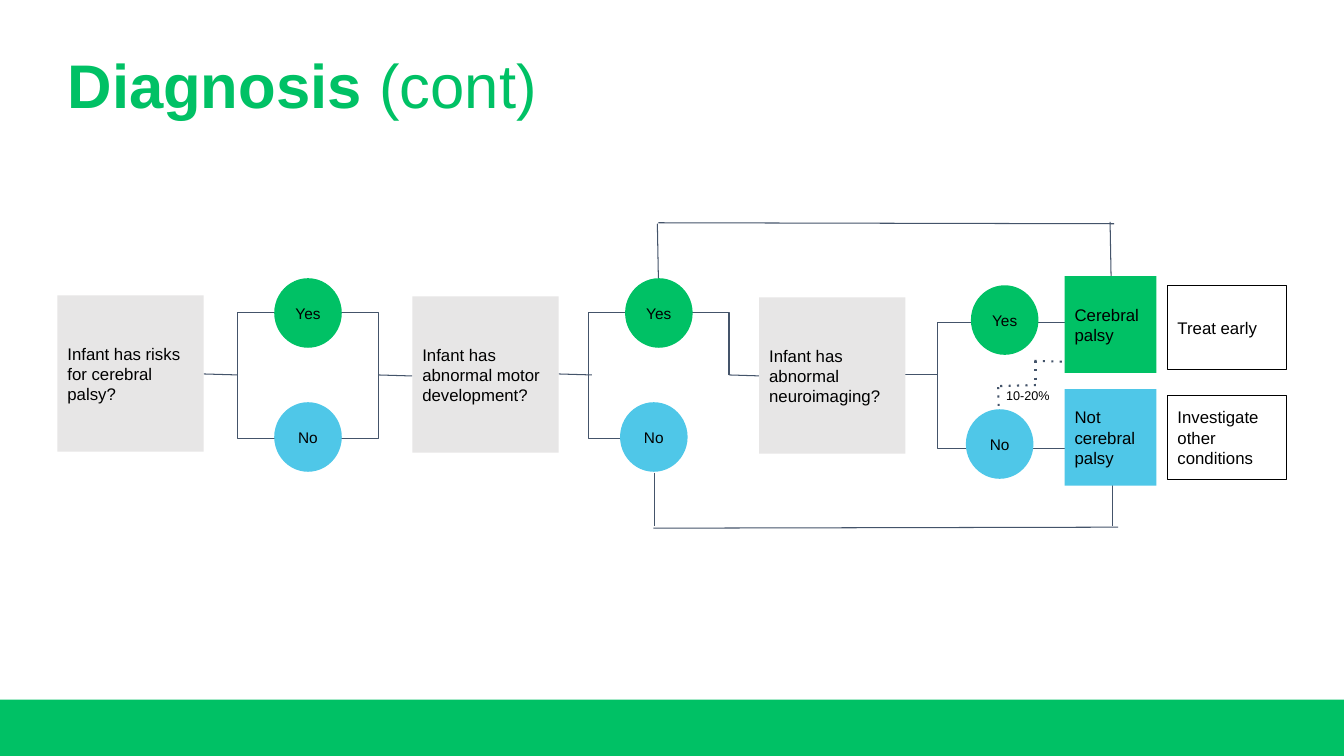
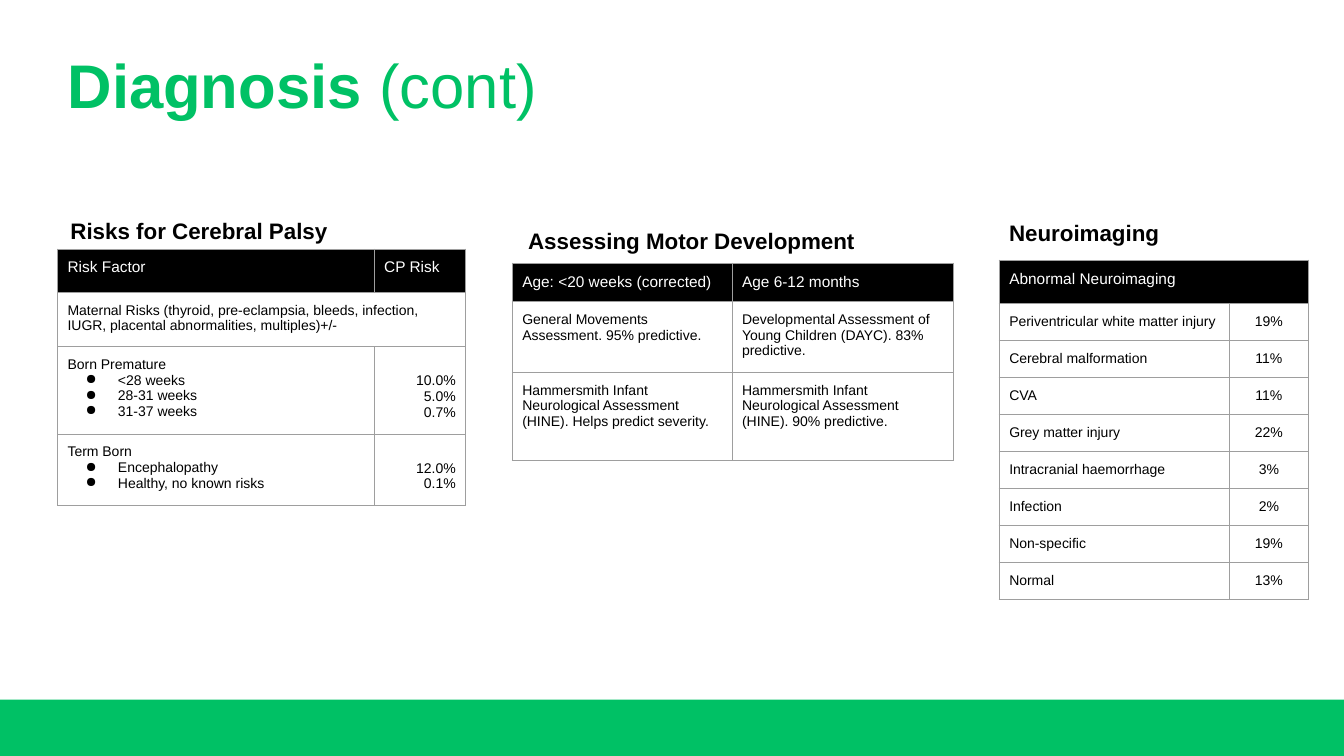
from lxml.etree import SubElement
from pptx import Presentation
from pptx.dml.color import RGBColor
from pptx.enum.shapes import MSO_CONNECTOR, MSO_SHAPE
from pptx.enum.text import MSO_ANCHOR as ANCHOR, MSO_AUTO_SIZE, PP_ALIGN as ALIGN
from pptx.oxml.ns import qn
from pptx.util import Pt

PX = 9144
FONT = "Arial"
COLORS = {
    "green": "00C165",
    "blue": "4FC7E8",
    "gray": "E7E6E6",
    "slate": "44546A",
    "border": "9E9E9E",
    "black": "000000",
    "white": "FFFFFF",
}


def rgb(name):
    return RGBColor.from_string(COLORS[name])


def style_paragraph(paragraph, size, color="black", bold=False, align=ALIGN.LEFT):
    paragraph.alignment = align
    for run in paragraph.runs:
        run.font.name = FONT
        run.font.size = Pt(size)
        run.font.bold = bold
        run.font.color.rgb = rgb(color)


presentation = Presentation()
presentation.slide_width = 1333 * PX
presentation.slide_height = 750 * PX
layout = presentation.slide_layouts[5]
slides = [presentation.slides.add_slide(layout) for _ in range(2)]
flow_slide, table_slide = slides

band = flow_slide.shapes.add_shape(MSO_SHAPE.RECTANGLE, 0, 694 * PX, 1333 * PX, 56 * PX)
band.shadow.inherit = False
band.fill.solid()
band.fill.fore_color.rgb = rgb("green")
band.line.fill.background()
band.element.nvSpPr.cNvPr.id = 20
layout.shapes.element.insert(2, band.element)

for slide in slides:
    title = slide.shapes.title
    title.left, title.top, title.width, title.height = 57 * PX, 50 * PX, 547 * PX, 78 * PX
    title.text_frame.auto_size = MSO_AUTO_SIZE.NONE
    title.text_frame.vertical_anchor = ANCHOR.TOP
    paragraph = title.text_frame.paragraphs[0]
    paragraph.line_spacing = 0.9
    for text in ("Diagnosis ", "(cont)"):
        paragraph.add_run().text = text
    style_paragraph(paragraph, 44, "green")
    paragraph.runs[0].font.bold = True

brackets = [
    [(236, 310), (375, 310), (375, 435), (236, 435), (236, 310)],
    [(723, 372), (723, 310), (584, 310), (584, 435), (650, 435)],
    [(1056, 320), (930, 320), (930, 445), (1056, 445)],
]
for points in brackets:
    builder = flow_slide.shapes.build_freeform(*points[0], scale=PX)
    builder.add_line_segments(points[1:], close=False)
    bracket = builder.convert_to_shape()
    bracket.shadow.inherit = False
    bracket.fill.background()
    bracket.line.color.rgb = rgb("slate")
    bracket.line.width = Pt(0.75)

solid_lines = [
    (202, 371, 236, 372),
    (375, 372, 409, 373),
    (554, 371, 587, 372),
    (723, 372, 756, 373),
    (897, 372, 930, 372),
    (652, 222, 653, 276),
    (653, 221, 1105, 222),
    (1101, 220, 1102, 274),
    (1103, 522, 1103, 469),
    (1109, 523, 648, 524),
    (649, 469, 649, 522),
]
dotted_lines = [
    (990, 384, 991, 424),
    (992, 383, 1028, 382),
    (1027, 358, 1027, 381),
    (1026, 358, 1059, 359),
]
for lines, width, dotted in ((solid_lines, 0.75, False), (dotted_lines, 1.5, True)):
    for ends in lines:
        connector = flow_slide.shapes.add_connector(
            MSO_CONNECTOR.STRAIGHT, *(value * PX for value in ends)
        )
        connector.line.color.rgb = rgb("slate")
        connector.line.width = Pt(width)
        properties = connector.element.spPr
        if dotted:
            SubElement(properties.find(qn("a:ln")), qn("a:prstDash")).set("val", "dot")
        SubElement(properties, qn("a:effectLst"))

RECT, OVAL = MSO_SHAPE.RECTANGLE, MSO_SHAPE.OVAL
nodes = [
    (RECT, 57, 293, 145, 155, "gray", "Infant has risks for cerebral palsy?"),
    (RECT, 409, 294, 145, 155, "gray", "Infant has abnormal motor development?"),
    (RECT, 753, 295, 145, 155, "gray", "Infant has abnormal neuroimaging?"),
    (RECT, 1056, 274, 91, 96, "green", "Cerebral palsy"),
    (RECT, 1056, 386, 91, 96, "blue", "Not cerebral palsy"),
    (RECT, 1158, 283, 118, 84, "white", "Treat early"),
    (RECT, 1158, 392, 118, 84, "white", "Investigate other conditions"),
]
for yes_left, no_left, yes_top, no_top in (
    (272, 272, 276, 399), (620, 615, 276, 399), (963, 958, 283, 406)
):
    nodes.append((OVAL, yes_left, yes_top, 67, 69, "green", "Yes"))
    nodes.append((OVAL, no_left, no_top, 67, 69, "blue", "No"))

for kind, left, top, width, height, color, text in nodes:
    node = flow_slide.shapes.add_shape(kind, left * PX, top * PX, width * PX, height * PX)
    node.shadow.inherit = False
    node.fill.solid()
    node.fill.fore_color.rgb = rgb(color)
    if color == "white":
        node.line.color.rgb = rgb("black")
        node.line.width = Pt(0.75)
    else:
        node.line.fill.background()
    frame = node.text_frame
    frame.word_wrap = True
    frame.vertical_anchor = ANCHOR.MIDDLE
    frame.margin_left = frame.margin_right = 0 if kind == OVAL else 10 * PX
    frame.text = text
    if kind == OVAL:
        style_paragraph(frame.paragraphs[0], 11, align=ALIGN.CENTER)
    else:
        style_paragraph(frame.paragraphs[0], 12)

labels = [
    (flow_slide, 988, 381, 91, 23, 9, False, "10-20%"),
    (table_slide, 60, 210, 399, 37, 16, True, "Risks for Cerebral Palsy"),
    (table_slide, 514, 220, 363, 37, 16, True, "Assessing Motor Development"),
    (table_slide, 991, 212, 266, 37, 16, True, "Neuroimaging"),
]
for slide, left, top, width, height, size, bold, text in labels:
    label = slide.shapes.add_textbox(left * PX, top * PX, width * PX, height * PX)
    label.text_frame.word_wrap = True
    label.text_frame.vertical_anchor = ANCHOR.MIDDLE
    label.text_frame.text = text
    style_paragraph(label.text_frame.paragraphs[0], size, bold=bold)

risk_rows = [
    ("Risk Factor", "CP Risk"),
    ("Maternal Risks (thyroid, pre-eclampsia, bleeds, infection, IUGR, "
     "placental abnormalities, multiples)+/-", None),
    ("Born Premature\n<28 weeks\n28-31 weeks\n31-37 weeks", "10.0%\n5.0%\n0.7%"),
    ("Term Born\nEncephalopathy\nHealthy, no known risks", "12.0%\n0.1%"),
]
motor_rows = [
    ("Age: <20 weeks (corrected)", "Age 6-12 months"),
    ("General Movements Assessment. 95% predictive.",
     "Developmental Assessment of Young Children (DAYC). 83% predictive."),
    ("Hammersmith Infant Neurological Assessment (HINE). Helps predict severity.",
     "Hammersmith Infant Neurological Assessment (HINE). 90% predictive."),
]
imaging_rows = [
    ("Abnormal Neuroimaging", None),
    ("Periventricular white matter injury", "19%"),
    ("Cerebral malformation", "11%"),
    ("CVA", "11%"),
    ("Grey matter injury", "22%"),
    ("Intracranial haemorrhage", "3%"),
    ("Infection", "2%"),
    ("Non-specific", "19%"),
    ("Normal", "13%"),
]
tables = [
    (57, 247, (314, 91), (43, 54, 86, 71), ALIGN.RIGHT, risk_rows),
    (508, 261, (218, 220), (38, 70, 87), ALIGN.LEFT, motor_rows),
    (991, 258, (228, 79), (43,) + (36,) * 8, ALIGN.CENTER, imaging_rows),
]
for left, top, widths, heights, value_align, rows in tables:
    table = table_slide.shapes.add_table(
        len(rows), 2, left * PX, top * PX, sum(widths) * PX, sum(heights) * PX
    ).table
    table.first_row = table.horz_banding = False
    for column, width in zip(table.columns, widths):
        column.width = width * PX
    for row_index, (row, height) in enumerate(zip(rows, heights)):
        table.rows[row_index].height = height * PX
        is_header = row_index == 0
        for column_index, text in enumerate(row):
            cell = table.cell(row_index, column_index)
            cell.margin_left = cell.margin_right = 10 * PX
            cell.margin_top = cell.margin_bottom = 10 * PX
            for side in ("L", "R", "T", "B"):
                border = SubElement(cell._tc.get_or_add_tcPr(), qn(f"a:ln{side}"), w=str(Pt(0.75)))
                fill = SubElement(border, qn("a:solidFill"))
                SubElement(fill, qn("a:srgbClr"), val=COLORS["border"])
            if is_header:
                cell.fill.solid()
                cell.fill.fore_color.rgb = rgb("black")
            else:
                cell.fill.background()
            if text is None:
                table.cell(row_index, 0).merge(cell)
                continue
            cell.text_frame.text = text
            is_value = column_index == 1 and not is_header
            if is_value and "\n" in text:
                cell.vertical_anchor = ANCHOR.BOTTOM
                cell.margin_bottom = 14 * PX
            for line_index, paragraph in enumerate(cell.text_frame.paragraphs):
                if column_index == 0 and line_index > 0:
                    properties = paragraph._p.get_or_add_pPr()
                    properties.set("marL", str(50 * PX))
                    properties.set("indent", str(-32 * PX))
                    bullet_color = SubElement(properties, qn("a:buClr"))
                    SubElement(bullet_color, qn("a:srgbClr"), val=COLORS["black"])
                    SubElement(properties, qn("a:buChar"), char="●")
                style_paragraph(
                    paragraph,
                    11 if is_header else 10,
                    "white" if is_header else "black",
                    align=value_align if is_value else ALIGN.LEFT,
                )

presentation.save("out.pptx")
